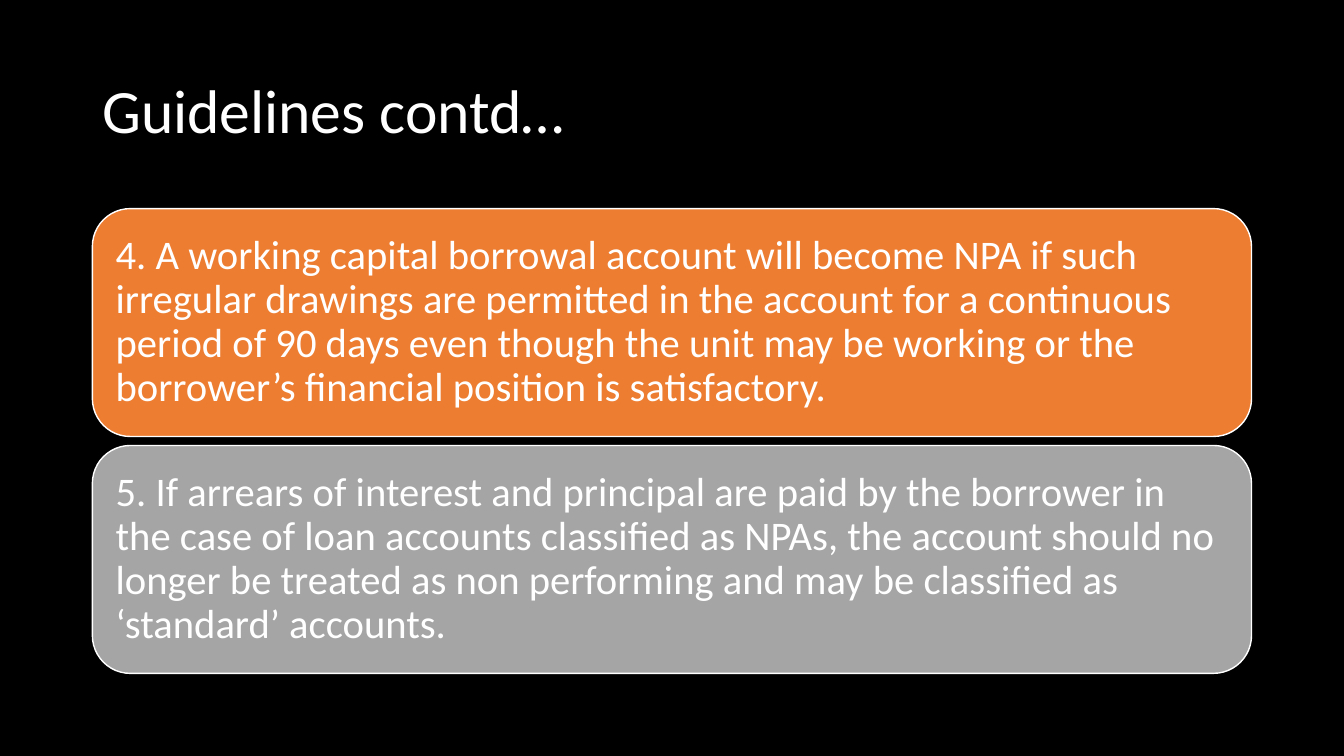
"""Build the slide of continued guidelines on non performing accounts."""
from dataclasses import dataclass

from pptx import Presentation
from pptx.dml.color import RGBColor as RGB
from pptx.enum.shapes import MSO_SHAPE as SHAPE
from pptx.enum.text import MSO_ANCHOR as ANCHOR, PP_ALIGN as ALIGN
from pptx.slide import Slide
from pptx.text.text import TextFrame
from pptx.util import Pt


@dataclass(frozen=True)
class Theme:
    font: str = "Calibri"
    background: RGB = RGB(0x00, 0x00, 0x00)
    text: RGB = RGB(0xFF, 0xFF, 0xFF)
    orange: RGB = RGB(0xED, 0x7D, 0x31)
    grey: RGB = RGB(0xA5, 0xA5, 0xA5)
    title_size: float = 44
    body_size: float = 29


@dataclass(frozen=True)
class Guideline:
    text: str
    fill: RGB


THEME = Theme()
LEFT, WIDTH = 66, 828
TITLE_TOP, TITLE_HEIGHT = 28.8, 104.4
CARD_TOP, CARD_HEIGHT, CARD_GAP = 149, 162.8, 6.4
CARD_INSET = 8.7

GUIDELINES = [
    Guideline(
        "4. A working capital borrowal account will become NPA if such irregular "
        "drawings are permitted in the account for a continuous period of 90 days "
        "even though the unit may be working or the borrower’s financial position "
        "is satisfactory.",
        THEME.orange,
    ),
    Guideline(
        "5. If arrears of interest and principal are paid by the borrower in the "
        "case of loan accounts classified as NPAs, the account should no longer be "
        "treated as non performing and may be classified as ‘standard’ accounts.",
        THEME.grey,
    ),
]


def write(tf: TextFrame, text: str, size: float) -> None:
    """Fill a text frame with one left-aligned, vertically centred paragraph."""
    p = tf.paragraphs[0]
    r = p.add_run()
    r.text = text
    r.font.color.rgb = THEME.text
    formats = {
        tf: {"word_wrap": True, "vertical_anchor": ANCHOR.MIDDLE},
        p: {"alignment": ALIGN.LEFT, "line_spacing": 0.9},
        r.font: {"name": THEME.font, "size": Pt(size)},
    }
    for target, values in formats.items():
        for name, value in values.items():
            setattr(target, name, value)


def add_title(s: Slide, text: str) -> None:
    """Add the slide title."""
    box = s.shapes.add_textbox(Pt(LEFT), Pt(TITLE_TOP), Pt(WIDTH), Pt(TITLE_HEIGHT))
    write(box.text_frame, text, THEME.title_size)


def add_card(s: Slide, guideline: Guideline, top: float) -> None:
    """Add a rounded card holding one guideline."""
    sp = s.shapes.add_shape(
        SHAPE.ROUNDED_RECTANGLE, Pt(LEFT), Pt(top), Pt(WIDTH), Pt(CARD_HEIGHT)
    )
    sp.shadow.inherit = False
    sp.fill.solid()
    sp.fill.fore_color.rgb = guideline.fill
    sp.line.color.rgb = THEME.text
    sp.line.width = Pt(1)
    tf = sp.text_frame
    for side in ("left", "top", "right", "bottom"):
        setattr(tf, f"margin_{side}", Pt(CARD_INSET))
    write(tf, guideline.text, THEME.body_size)


def main() -> None:
    """Build and save the presentation."""
    prs = Presentation()
    prs.slide_width, prs.slide_height = Pt(960), Pt(540)
    s = prs.slides.add_slide(prs.slide_layouts[6])
    s.background.fill.solid()
    s.background.fill.fore_color.rgb = THEME.background
    add_title(s, "Guidelines contd…")
    for i, guideline in enumerate(GUIDELINES):
        add_card(s, guideline, CARD_TOP + i * (CARD_HEIGHT + CARD_GAP))
    prs.save("out.pptx")


if __name__ == "__main__":
    main()
